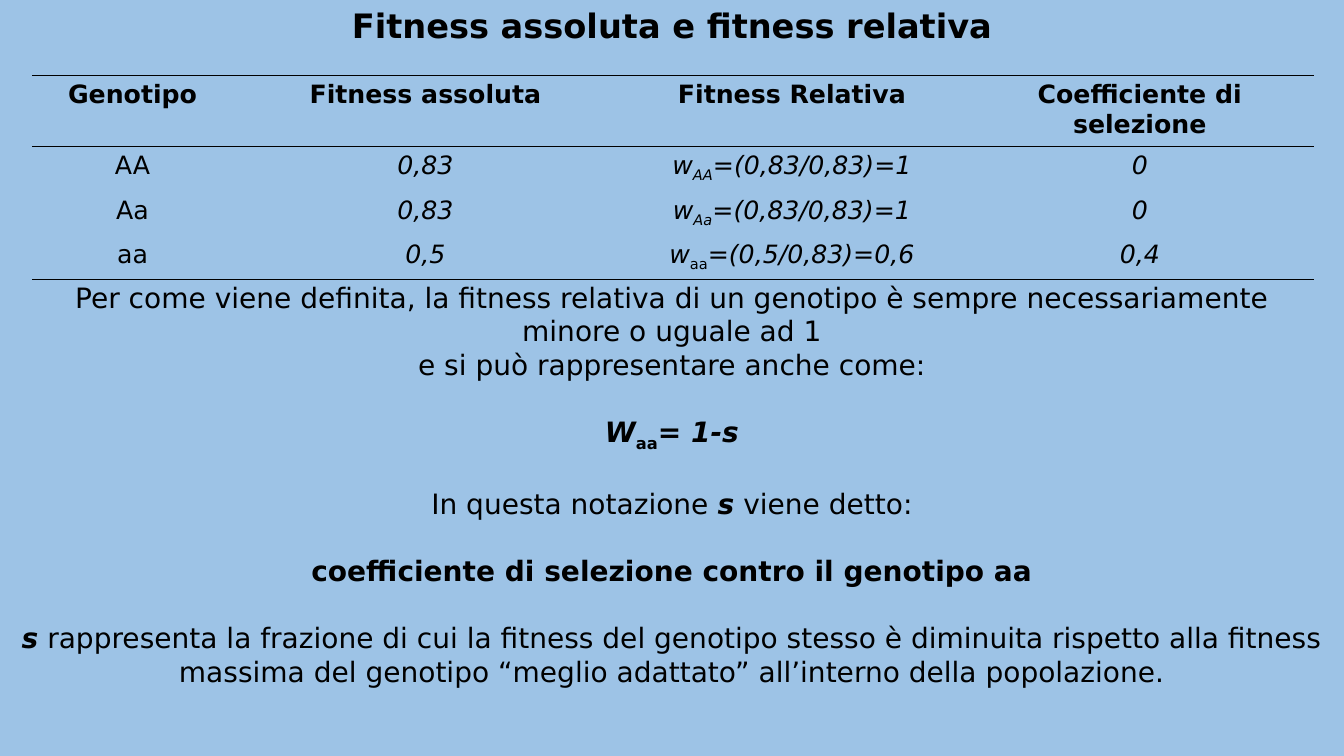
from lxml import etree
from pptx import Presentation
from pptx import util as u
from pptx.dml.color import RGBColor
from pptx.enum import text as t
from pptx.oxml import ns

SKY = RGBColor(0x9D, 0xC3, 0xE6)
BLACK = RGBColor(0, 0, 0)
FONT = "DejaVu Sans"


def write(paragraph, text, size=20, bold=False, italic=False, sub=False):
    paragraph.alignment = t.PP_ALIGN.CENTER
    run = paragraph.add_run()
    run.text = text
    run.font.name = FONT
    run.font.size = u.Pt(size)
    run.font.bold = bold
    run.font.italic = italic
    run.font.color.rgb = BLACK
    if sub:
        run.font._element.set("baseline", "-25000")


def set_border(cell, side, visible):
    line = etree.SubElement(cell._tc.get_or_add_tcPr(), ns.qn(f"a:ln{side}"), w=str(u.Pt(1)))
    if visible:
        fill = etree.SubElement(line, ns.qn("a:solidFill"))
        etree.SubElement(fill, ns.qn("a:srgbClr"), val=str(BLACK))
    else:
        etree.SubElement(line, ns.qn("a:noFill"))


prs = Presentation()
prs.slide_width, prs.slide_height = u.Inches(13.33), u.Inches(7.5)
slide = prs.slides.add_slide(prs.slide_layouts[6])
slide.background.fill.solid()
slide.background.fill.fore_color.rgb = SKY

title = slide.shapes.add_textbox(0, 0, prs.slide_width, u.Inches(0.5)).text_frame
title.word_wrap = True
write(title.paragraphs[0], "Fitness assoluta e fitness relativa", size=24, bold=True)

headings = ["Genotipo", "Fitness assoluta", "Fitness Relativa", "Coefficiente di selezione"]
genotypes = [
    ("AA", "0,83", "=(0,83/0,83)=1", "0"),
    ("Aa", "0,83", "=(0,83/0,83)=1", "0"),
    ("aa", "0,5", "=(0,5/0,83)=0,6", "0,4"),
]
column_widths = [1.99, 3.82, 3.45, 3.45]
row_heights = [0.7] + [0.44] * len(genotypes)
fitness = slide.shapes.add_table(
    len(row_heights), len(column_widths), u.Inches(0.32), u.Inches(0.75),
    u.Inches(sum(column_widths)), u.Inches(sum(row_heights))).table
fitness.first_row = fitness.horz_banding = False
for column, width in zip(fitness.columns, column_widths):
    column.width = u.Inches(width)
for row, height in zip(fitness.rows, row_heights):
    row.height = u.Inches(height)

for r, values in enumerate([headings] + genotypes):
    for c, value in enumerate(values):
        cell = fitness.cell(r, c)
        paragraph = cell.text_frame.paragraphs[0]
        if r and c == 2:
            write(paragraph, "w", size=18, italic=True)
            write(paragraph, values[0], size=18, italic=values[0] != "aa", sub=True)
        write(paragraph, value, size=18, bold=r == 0, italic=r > 0 and c > 0)
        for side, visible in [("L", False), ("R", False), ("T", r < 2),
                              ("B", r in (0, len(genotypes)))]:
            set_border(cell, side, visible)
        cell.fill.background()

strong = dict(bold=True, italic=True)
explanation = [
    (0, [("Per come viene definita, la fitness relativa di un genotipo è sempre "
          "necessariamente", {})]),
    (0, [("minore o uguale ad 1", {})]),
    (0, [("e si può rappresentare anche come:", {})]),
    (1, [("W", strong), ("aa", dict(bold=True, sub=True)), ("= 1-s", strong)]),
    (1, [("In questa notazione ", {}), ("s", strong), (" viene detto:", {})]),
    (1, [("coefficiente di selezione contro il genotipo aa", dict(bold=True))]),
    (1, [("s", strong),
         (" rappresenta la frazione di cui la fitness del genotipo stesso è diminuita "
          "rispetto alla fitness massima del genotipo “meglio adattato” all’interno "
          "della popolazione.", {})]),
]
body = slide.shapes.add_textbox(0, u.Inches(2.73), prs.slide_width, u.Inches(4.14)).text_frame
body.word_wrap = True
for n, (lines_before, runs) in enumerate(explanation):
    paragraph = body.add_paragraph() if n else body.paragraphs[0]
    if lines_before:
        paragraph.space_before = u.Pt(24 * lines_before)
    for text, style in runs:
        write(paragraph, text, **style)

prs.save("out.pptx")
